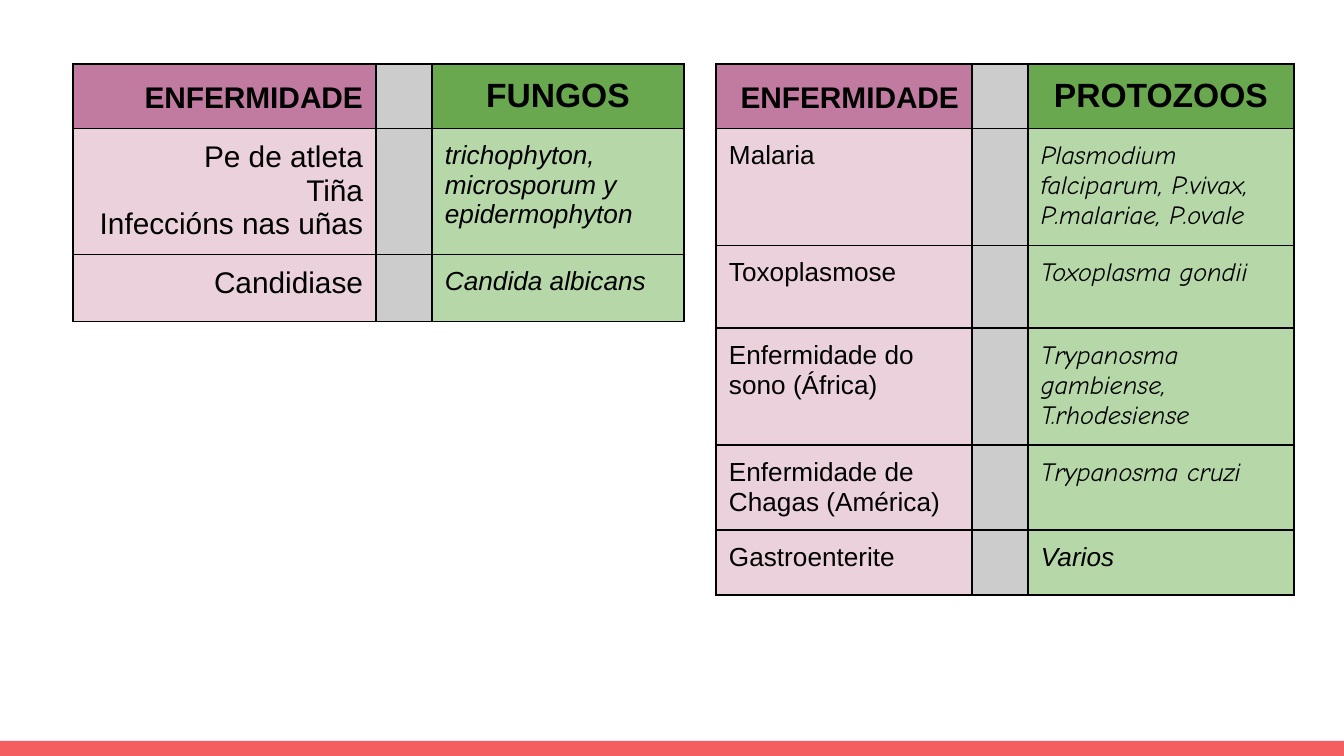
from dataclasses import dataclass

from lxml import etree
from pptx import Presentation
from pptx import util as u
from pptx.dml.color import RGBColor
from pptx.enum import shapes, text
from pptx.oxml.ns import qn

PX = 914400 / 134.4
WIDTH, HEIGHT = 1344, 756
INSET = 13
TOP = 64


@dataclass(frozen=True)
class Theme:
    ink: str = "000000"
    strip: str = "F55E61"
    gap: str = "CCCCCC"
    disease_head: str = "C27BA0"
    disease_body: str = "EAD1DC"
    agent_head: str = "6AA84F"
    agent_body: str = "B6D7A8"
    font: str = "Arial"
    latin_name_font: str = "Comic Neue"
    large: int = 18
    medium: int = 16
    small: int = 14
    border: float = 0.75


T = Theme()
RIGHT, CENTER = text.PP_ALIGN.RIGHT, text.PP_ALIGN.CENTER


def px(n):
    return u.Emu(round(n * PX))


def add_border(cell):
    tc_pr = cell._tc.get_or_add_tcPr()
    for side in ("a:lnL", "a:lnR", "a:lnT", "a:lnB"):
        ln = etree.SubElement(tc_pr, qn(side), w=str(u.Pt(T.border)))
        fill = etree.SubElement(ln, qn("a:solidFill"))
        etree.SubElement(fill, qn("a:srgbClr"), val=T.ink)


def fill_cell(cell, color, words="", size=T.small, font=T.font, bold=False,
              italic=False, align=None, spacing=None):
    """Style a cell; each line of words becomes a paragraph."""
    add_border(cell)
    cell.fill.solid()
    cell.fill.fore_color.rgb = RGBColor.from_string(color)
    cell.margin_left = cell.margin_right = px(INSET)
    cell.margin_top = cell.margin_bottom = px(INSET)
    cell.text_frame.text = words
    for p in cell.text_frame.paragraphs:
        p.alignment = align
        p.line_spacing = spacing
        p.font.name = font
        p.font.size = u.Pt(size)
        p.font.bold = bold
        p.font.italic = italic
        p.font.color.rgb = RGBColor.from_string(T.ink)


def add_disease_table(s, left, widths, heights, agent, rows, size, align=None):
    """Draw diseases beside their agents; rows hold (disease, agent, agent font)."""
    frame = s.shapes.add_table(len(heights), len(widths), px(left), px(TOP),
                               px(sum(widths)), px(sum(heights)))
    table = frame.table
    table.first_row = table.horz_banding = False
    for column, width in zip(table.columns, widths):
        column.width = px(width)
    for row, height in zip(table.rows, heights):
        row.height = px(height)

    fill_cell(table.cell(0, 0), T.disease_head, "ENFERMIDADE", T.medium,
              bold=True, align=RIGHT, spacing=1.15)
    fill_cell(table.cell(0, 2), T.agent_head, agent, T.large,
              bold=True, align=CENTER)
    for i in range(len(heights)):
        fill_cell(table.cell(i, 1), T.gap)
    for i, (disease, name, font) in enumerate(rows, start=1):
        fill_cell(table.cell(i, 0), T.disease_body, disease, size, align=align)
        fill_cell(table.cell(i, 2), T.agent_body, name, font=font, italic=True)


def add_bottom_strip(s):
    height = 15
    sp = s.shapes.add_shape(shapes.MSO_SHAPE.RECTANGLE, 0, px(HEIGHT - height),
                            px(WIDTH), px(height))
    sp.shadow.inherit = False
    sp.fill.solid()
    sp.fill.fore_color.rgb = RGBColor.from_string(T.strip)
    sp.line.fill.background()


def main():
    prs = Presentation()
    prs.slide_width, prs.slide_height = px(WIDTH), px(HEIGHT)
    s = prs.slides.add_slide(prs.slide_layouts[6])
    add_bottom_strip(s)

    fungi = [
        ("Pe de atleta\nTiña\nInfeccións nas uñas",
         "trichophyton, microsporum y epidermophyton", T.font),
        ("Candidiase", "Candida albicans", T.font),
    ]
    add_disease_table(s, 73, (303, 56, 252), (64, 126, 67), "FUNGOS", fungi,
                      T.medium, RIGHT)

    protozoa = [
        ("Malaria", "Plasmodium falciparum, P.vivax, P.malariae, P.ovale",
         T.latin_name_font),
        ("Toxoplasmose", "Toxoplasma gondii", T.latin_name_font),
        ("Enfermidade do sono (África)", "Trypanosma gambiense, T.rhodesiense",
         T.latin_name_font),
        ("Enfermidade de Chagas (América)", "Trypanosma cruzi",
         T.latin_name_font),
        ("Gastroenterite", "Varios", T.font),
    ]
    add_disease_table(s, 716, (256, 56, 266), (64, 117, 83, 117, 85, 65),
                      "PROTOZOOS", protozoa, T.small)
    prs.save("out.pptx")


if __name__ == "__main__":
    main()
